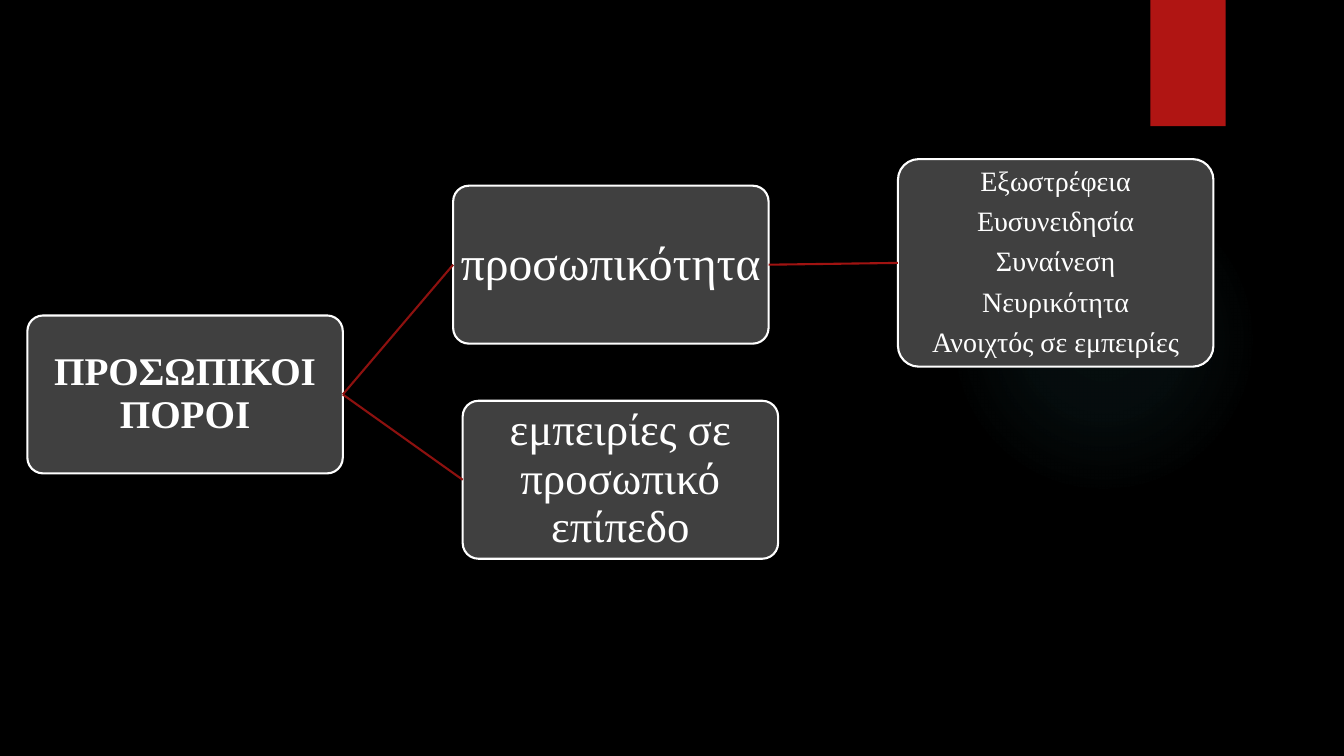
from lxml import etree
from pptx import Presentation
from pptx.dml.color import RGBColor
from pptx.enum import shapes, text
from pptx.oxml import ns
from pptx.util import Cm, Pt

BLACK = RGBColor(0x00, 0x00, 0x00)
WHITE = RGBColor(0xFF, 0xFF, 0xFF)
GREY = RGBColor(0x40, 0x40, 0x40)
RED = RGBColor(0xB0, 0x15, 0x13)
DARK = RGBColor(0x8D, 0x11, 0x0F)
MID = RGBColor(0xA0, 0x13, 0x11)
TEAL = RGBColor(0x50, 0xB9, 0xC1)
FONT = "Times New Roman"
WIDE, HIGH = 7.95, 3.98


def add_shape(slide, kind, x, y, w, h):
    """Add a preset shape with no shadow and no outline."""
    shape = slide.shapes.add_shape(kind, Cm(x), Cm(y), Cm(w), Cm(h))
    shape.shadow.inherit = False
    shape.line.fill.background()
    return shape


def add_glow(slide, x, y, size, stops):
    """Add a circle that fades out from its centre."""
    glow = add_shape(slide, shapes.MSO_SHAPE.OVAL, x, y, size, size)
    fill = etree.Element(ns.qn("a:gradFill"), rotWithShape="1")
    items = etree.SubElement(fill, ns.qn("a:gsLst"))
    for place, alpha in stops:
        stop = etree.SubElement(items, ns.qn("a:gs"), pos=str(place * 1000))
        tint = etree.SubElement(stop, ns.qn("a:srgbClr"), val=str(TEAL))
        etree.SubElement(tint, ns.qn("a:alpha"), val=str(alpha * 1000))
    way = etree.SubElement(fill, ns.qn("a:path"), path="circle")
    sides = dict.fromkeys("ltrb", "50000")
    etree.SubElement(way, ns.qn("a:fillToRect"), **sides)
    glow._element.spPr.find(ns.qn("a:prstGeom")).addnext(fill)


def add_tab(slide, x, y, w, h):
    """Add the plain red block at the top edge."""
    tab = add_shape(slide, shapes.MSO_SHAPE.RECTANGLE, x, y, w, h)
    tab.fill.solid()
    tab.fill.fore_color.rgb = RED


def write(shape, lines, size=20, bold=False, gap=0):
    """Write centred paragraphs into a shape."""
    frame = shape.text_frame
    frame.word_wrap = True
    frame.vertical_anchor = text.MSO_ANCHOR.MIDDLE
    frame.margin_left = frame.margin_right = Cm(0.03)
    frame.margin_top = frame.margin_bottom = Cm(0.03)
    for i, line in enumerate(lines):
        para = frame.add_paragraph() if i else frame.paragraphs[0]
        para.text = line
        para.alignment = text.PP_ALIGN.CENTER
        para.line_spacing = 0.9
        if i:
            para.space_before = Pt(gap)
        font = para.font
        font.name, font.size, font.bold = FONT, Pt(size), bold
        font.color.rgb = WHITE


def add_node(slide, x, y, lines, h=HIGH, **style):
    """Add a rounded box of the tree with its text."""
    node = add_shape(slide, shapes.MSO_SHAPE.ROUNDED_RECTANGLE, x, y, WIDE, h)
    node.adjustments[0] = 0.1
    node.fill.solid()
    node.fill.fore_color.rgb = GREY
    node.line.color.rgb = WHITE
    node.line.width = Pt(1.5)
    write(node, lines, **style)
    return node


def join(slide, start, end, color):
    """Join the right side of one box to the left side of the next."""
    link = slide.shapes.add_connector(shapes.MSO_CONNECTOR.STRAIGHT, 0, 0, 0, 0)
    link.begin_connect(start, 3)
    link.end_connect(end, 1)
    link.line.color.rgb = color
    link.line.width = Pt(1.5)
    etree.SubElement(link._element.spPr, ns.qn("a:effectLst"))


def main():
    """Build the slide and save it."""
    deck = Presentation()
    deck.slide_width, deck.slide_height = Cm(33.87), Cm(19.05)
    slide = deck.slides.add_slide(deck.slide_layouts[6])
    slide.background.fill.solid()
    slide.background.fill.fore_color.rgb = BLACK

    add_glow(slide, 23.9, 4.65, 7.82, [(0, 7), (36, 6), (69, 0)])
    add_tab(slide, 28.99, 0, 1.9, 3.18)

    root = add_node(slide, 0.69, 7.95, ["ΠΡΟΣΩΠΙΚΟΙ ΠΟΡΟΙ"], size=28, bold=True)
    self_box = add_node(slide, 11.42, 4.68, ["προσωπικότητα"], size=34)
    traits = add_node(slide, 22.63, 4.01, [
        "Εξωστρέφεια",
        "Ευσυνειδησία",
        "Συναίνεση",
        "Νευρικότητα",
        "Ανοιχτός σε εμπειρίες",
    ], h=5.23, size=20, gap=7)
    past = add_node(slide, 11.66, 10.1, ["εμπειρίες σε προσωπικό επίπεδο"], size=32)

    join(slide, root, self_box, DARK)
    join(slide, self_box, traits, MID)
    join(slide, root, past, DARK)
    deck.save("out.pptx")


if __name__ == "__main__":
    main()
